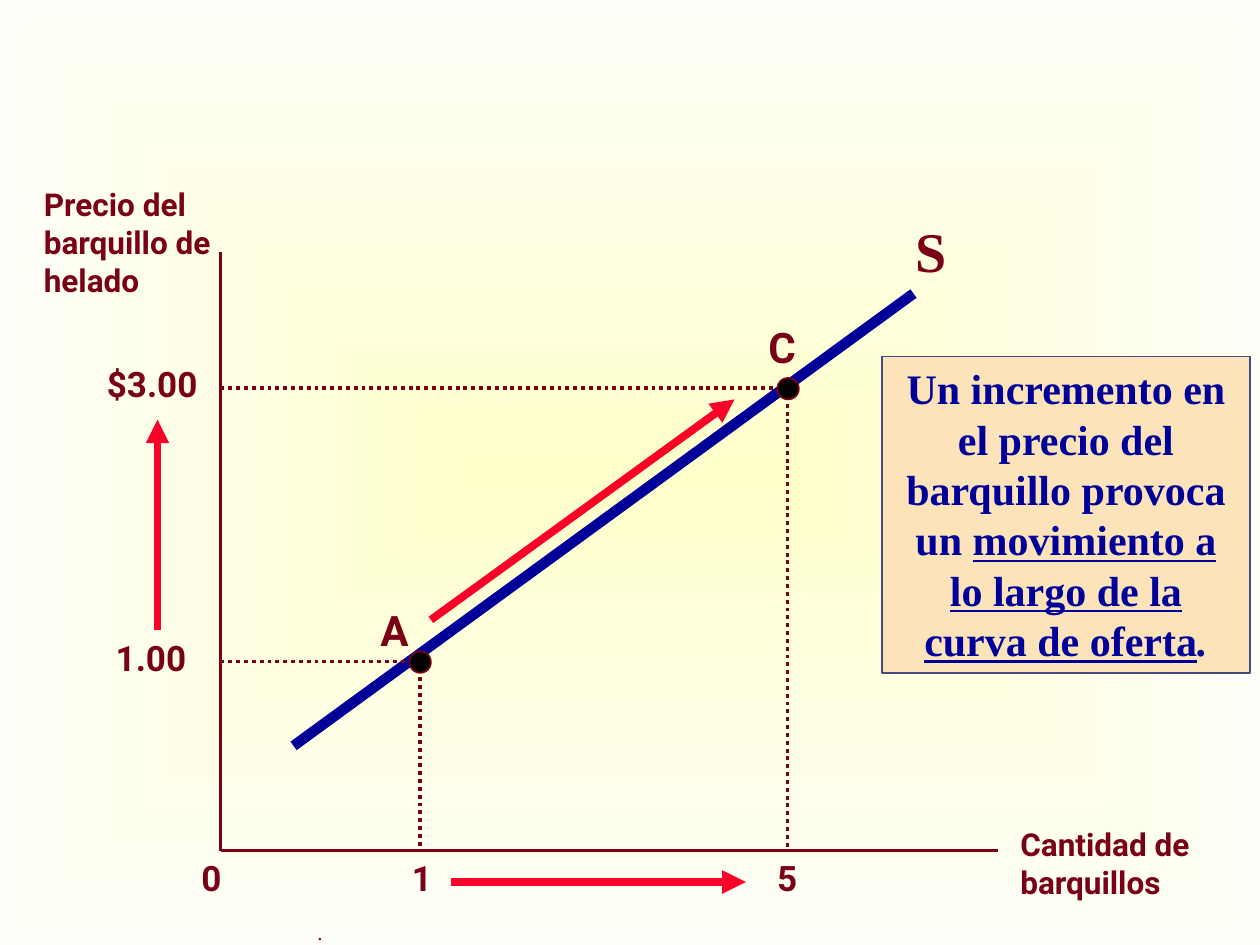
import pptx
import pptx.util
import pptx.dml.color
import pptx.enum.dml
import pptx.enum.shapes
import pptx.enum.text
import pptx.oxml
import pptx.oxml.ns

Inches, Pt = pptx.util.Inches, pptx.util.Pt
Align = pptx.enum.text.PP_ALIGN
Shape = pptx.enum.shapes.MSO_SHAPE
SANS, SERIF = "Roboto", "Times New Roman"
COLORS = {"wine": "790015", "navy": "000099", "red": "FC0128", "dot": "000000",
          "peach": "FDE3BA", "edge": "474A81", "cream": "FFFFCC", "pale": "FFFFFA"}


def color(name):
    return pptx.dml.color.RGBColor.from_string(COLORS[name])


def add_line(slide, start, end, tint="wine", width=2.25, dotted=False, arrow=False):
    line = slide.shapes.add_connector(
        pptx.enum.shapes.MSO_CONNECTOR.STRAIGHT, *map(Inches, start + end))
    line.line.color.rgb = color(tint)
    line.line.width = Pt(width)
    if dotted:
        line.line.dash_style = pptx.enum.dml.MSO_LINE.ROUND_DOT
    props = line._element.spPr
    if arrow:
        tail = pptx.oxml.ns.qn("a:tailEnd")
        line.line._get_or_add_ln().append(
            props.makeelement(tail, {"type": "triangle"}))
    props.append(props.makeelement(pptx.oxml.ns.qn("a:effectLst"), {}))


def add_text(slide, box, text, size, face=SANS):
    frame = slide.shapes.add_textbox(*map(Inches, box)).text_frame
    frame.word_wrap = True
    para = frame.paragraphs[0]
    para.text = text
    style(para.font, size, face, "wine")
    return frame


def style(font, size, face, tint):
    font.size, font.name, font.bold = Pt(size), face, True
    font.color.rgb = color(tint)


def add_shape(slide, kind, box, fill, edge):
    shape = slide.shapes.add_shape(kind, *map(Inches, box))
    shape.shadow.inherit = False
    shape.fill.solid()
    shape.fill.fore_color.rgb = color(fill)
    shape.line.color.rgb = color(edge)
    shape.line.width = Pt(1)
    return shape


def paint_back(slide):
    fill = slide.background.fill
    fill.gradient()
    for stop, name in zip(fill.gradient_stops, ("cream", "pale")):
        stop.color.rgb = color(name)
    # Swap the linear direction for one that grows from the centre
    grad = slide.background._cSld.bg.bgPr.find(pptx.oxml.ns.qn("a:gradFill"))
    grad.remove(grad.find(pptx.oxml.ns.qn("a:lin")))
    grad.append(pptx.oxml.parse_xml(
        f'<a:path {pptx.oxml.ns.nsdecls("a")} path="shape">'
        '<a:fillToRect l="50000" t="50000" r="50000" b="50000"/></a:path>'))


def draw_plot(slide, left, top, width, height):
    base = top + height

    def at(x, y):
        return left + x, base - y

    # Axes with their names
    add_line(slide, (left, top), (left, base))
    add_line(slide, (left, base), (left + width, base))
    add_text(slide, (left - 1.5, top - 0.58, 1.67, 1),
             "Precio del barquillo de helado", 18)
    add_text(slide, (left + width + 0.08, base - 0.25, 1.67, 1),
             "Cantidad de barquillos", 18)
    add_text(slide, (left - 0.25, base, 0.5, 0.43), "0", 20)

    # Supply curve
    add_line(slide, at(0.58, 0.83), at(5.5, 4.42), "navy", 6)
    add_text(slide, (*at(5.42, 5.08), 0.67, 0.63), "S", 32, SERIF)

    # Points: name, place, name offset, price and quantity with their indents
    points = [("A", 1.58, 1.5, -0.41, "1.00", 0.07, "1", -0.16),
              ("C", 4.5, 3.67, -0.25, "$3.00", 0, "5", -0.18)]
    for name, x, y, shift, price, indent, count, nudge in points:
        px, py = at(x, y)
        add_line(slide, (left, py), (px, py), dotted=True)
        add_line(slide, (px, py), (px, base), dotted=True)
        add_shape(slide, Shape.OVAL, (px - 0.08, py - 0.08, 0.17, 0.17), "dot", "wine")
        add_text(slide, (px + shift, py - (0.5 if name == "A" else 0.58), 0.42, 0.5),
                 name, 24)
        add_text(slide, (left - 1 + indent, py - 0.25, 1, 0.43), price, 20)
        add_text(slide, (px + nudge, base, 0.5, 0.43), count, 20)

    # Arrows of change
    for start, end in [((-0.5, 1.75), (-0.5, 3.42)),
                       ((1.83, -0.25), (4.17, -0.25)),
                       ((1.67, 1.83), (4.08, 3.58))]:
        add_line(slide, at(*start), at(*end), "red", 4.5, arrow=True)


def draw_note(slide, *box):
    frame = add_shape(slide, Shape.RECTANGLE, box, "peach", "edge").text_frame
    frame.word_wrap = True
    frame.vertical_anchor = pptx.enum.text.MSO_ANCHOR.TOP
    para = frame.paragraphs[0]
    para.alignment = Align.CENTER
    style(para.font, 24, SERIF, "navy")
    para.add_run().text = "Un incremento en el precio del barquillo provoca un "
    key = para.add_run()
    key.text = "movimiento a lo largo de la curva de oferta"
    key.font.underline = True
    stop = para.add_run()
    stop.text = "."
    stop.font.italic = True


def draw_foot(slide, *box):
    frame = add_text(slide, box, ".", 12, SERIF)
    frame.margin_top = frame.margin_bottom = 0
    frame.vertical_anchor = pptx.enum.text.MSO_ANCHOR.BOTTOM
    para = frame.paragraphs[0]
    para.alignment = Align.CENTER
    para.font.bold = False


def main():
    deck = pptx.Presentation()
    deck.slide_width, deck.slide_height = Inches(10), Inches(7.5)
    slide = deck.slides.add_slide(deck.slide_layouts[6])
    paint_back(slide)
    draw_foot(slide, 0, 7, 5.08, 0.5)
    draw_plot(slide, 1.75, 2, 6.17, 4.75)
    draw_note(slide, 7, 2.83, 2.92, 2.51)
    deck.save("out.pptx")


if __name__ == "__main__":
    main()
